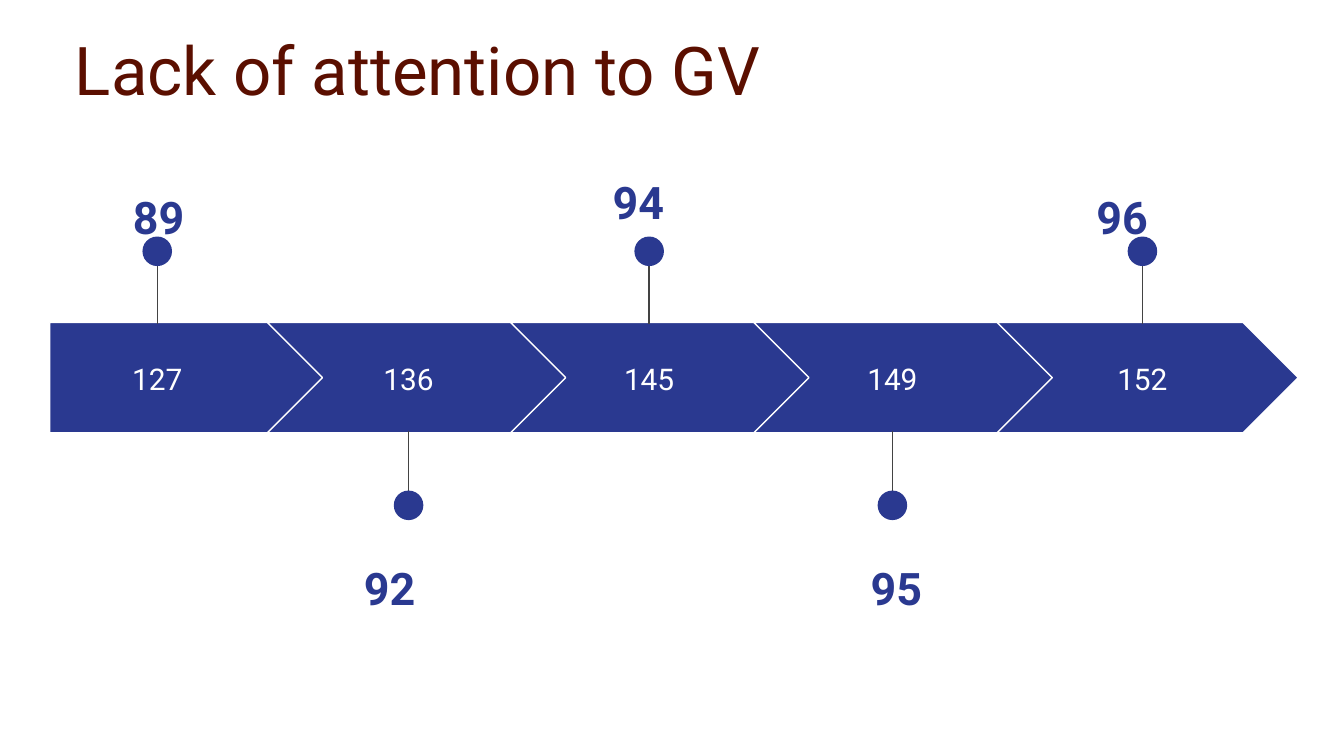
from lxml.etree import SubElement
from pptx import Presentation
from pptx.dml.color import RGBColor
from pptx.enum.shapes import MSO_CONNECTOR, MSO_SHAPE
from pptx.enum.text import MSO_ANCHOR, PP_ALIGN
from pptx.oxml.ns import qn
from pptx.util import Inches, Pt

BLUE = RGBColor(0x2A, 0x39, 0x90)
WHITE = RGBColor(0xFF, 0xFF, 0xFF)
GRAY = RGBColor(0x43, 0x43, 0x43)
MAROON = RGBColor(0x5B, 0x0F, 0x00)

BAR_TOP, BAR_HEIGHT = 2.4, 0.82
STEP_PITCH = 1.81
DOT = 0.22


class TimelineSlide:
    font = "Roboto"
    inset = Inches(0.1)

    def __init__(self, prs):
        self.s = prs.slides.add_slide(prs.slide_layouts[6])

    def text(self, text, x, y, w, h, size, color, bold=False,
             align=PP_ALIGN.LEFT, anchor=MSO_ANCHOR.TOP):
        sp = self.s.shapes.add_textbox(Inches(x), Inches(y), Inches(w), Inches(h))
        tf = sp.text_frame
        tf.word_wrap = True
        tf.vertical_anchor = anchor
        tf.margin_left = tf.margin_right = self.inset
        tf.margin_top = tf.margin_bottom = self.inset
        p = tf.paragraphs[0]
        p.alignment = align
        r = p.add_run()
        r.text = text
        r.font.name = self.font
        r.font.size = Pt(size)
        r.font.bold = bold
        r.font.color.rgb = color
        return p

    def arrow(self, kind, x, w):
        sp = self.s.shapes.add_shape(kind, Inches(x), Inches(BAR_TOP),
                                     Inches(w), Inches(BAR_HEIGHT))
        sp.shadow.inherit = False
        sp.adjustments[0] = 0.5
        sp.fill.solid()
        sp.fill.fore_color.rgb = BLUE
        sp.line.color.rgb = WHITE
        sp.line.width = Pt(0.75)

    def number(self, text, center, w):
        self.text(text, center - w / 2, 2.56, w, 0.51, 16, WHITE,
                  align=PP_ALIGN.CENTER, anchor=MSO_ANCHOR.MIDDLE)

    def pin(self, x, above):
        stem_top, dot_top = (1.8, 1.76) if above else (3.21, 3.65)
        group = self.s.shapes.add_group_shape()
        stem = group.shapes.add_connector(
            MSO_CONNECTOR.STRAIGHT, Inches(x), Inches(stem_top),
            Inches(x), Inches(stem_top + 0.61))
        stem.line.color.rgb = GRAY
        stem.line.width = Pt(0.75)
        SubElement(stem._element.spPr, qn("a:effectLst"))
        dot = group.shapes.add_shape(MSO_SHAPE.OVAL, Inches(x - DOT / 2),
                                     Inches(dot_top), Inches(DOT), Inches(DOT))
        dot.shadow.inherit = False
        dot.fill.solid()
        dot.fill.fore_color.rgb = BLUE
        dot.line.fill.background()

    def label(self, text, x, y, w, h):
        p = self.text(text, x, y, w, h, 24, BLUE, bold=True)
        p.line_spacing = 1.15
        p.space_after = Pt(16)


def main():
    prs = Presentation()
    prs.slide_width = Inches(10)
    prs.slide_height = Inches(10) * 9 // 16
    slide = TimelineSlide(prs)
    steps = [
        ("127", 1.17, "89", (0.89, 1.25, 2.05, 0.99)),
        ("136", 3.04, "92", (2.61, 4.01, 2.45, 0.99)),
        ("145", 4.83, "94", (4.46, 1.14, 2.41, 0.99)),
        ("149", 6.64, "95", (6.38, 4.01, 1.68, 1.09)),
        ("152", 8.5, "96", (8.06, 1.25, 2.45, 0.99)),
    ]
    for i, (number, center, label, label_box) in enumerate(steps):
        if i == 0:
            slide.arrow(MSO_SHAPE.PENTAGON, 0.37, 2.05)
        else:
            slide.arrow(MSO_SHAPE.CHEVRON, 1.99 + (i - 1) * STEP_PITCH, 2.24)
        slide.number(number, center, 1.44 if i else 1.59)
        slide.pin(center, above=i % 2 == 0)
        slide.label(label, *label_box)
    slide.text("Lack of attention to GV", 0.46, 0.11, 8, 0.81, 36, MAROON)
    prs.save("out.pptx")


if __name__ == "__main__":
    main()
